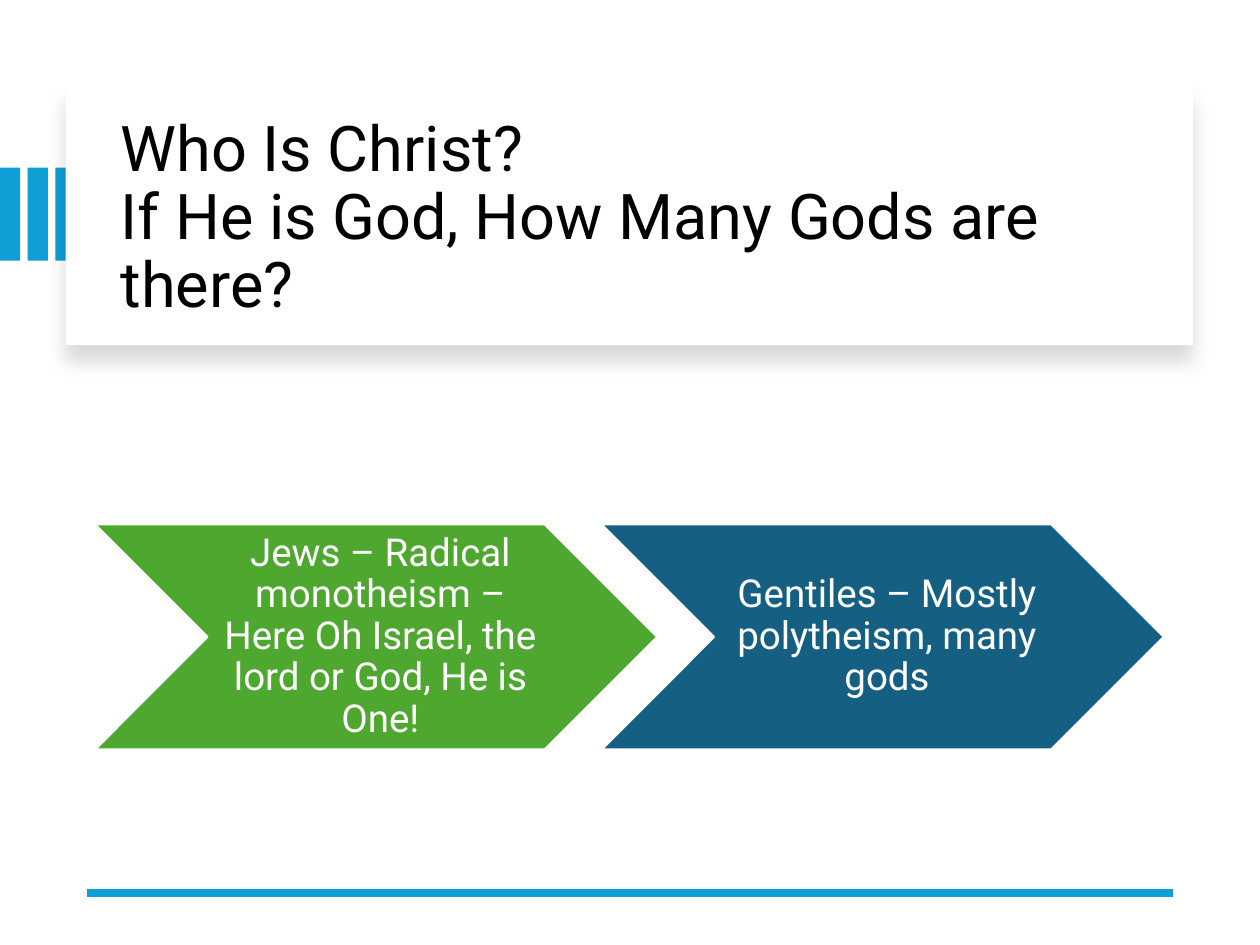
from dataclasses import dataclass

from lxml.etree import SubElement
from pptx import Presentation
from pptx.dml.color import RGBColor
from pptx.enum.shapes import MSO_CONNECTOR, MSO_SHAPE
from pptx.enum.text import MSO_ANCHOR, PP_ALIGN
from pptx.oxml import parse_xml
from pptx.oxml.ns import nsdecls, qn
from pptx.shapes.autoshape import Shape
from pptx.slide import Slide
from pptx.util import Inches, Pt

COLORS = {
    "accent": "0F9ED5",
    "green": "4EA72E",
    "navy": "156082",
    "white": "FFFFFF",
    "black": "000000",
}
FONT = "Roboto"


@dataclass
class Area:
    left: float
    top: float
    width: float
    height: float

    def lengths(self) -> list[int]:
        return [Inches(n) for n in (self.left, self.top, self.width, self.height)]


@dataclass
class Step:
    text: str
    color: str


STEPS = [
    Step("Jews – Radical monotheism – Here Oh Israel, the lord or God, He is One!", "green"),
    Step("Gentiles – Mostly polytheism, many gods", "navy"),
]


def color(name: str) -> RGBColor:
    return RGBColor.from_string(COLORS[name])


def add_filled(slide: Slide, kind: MSO_SHAPE, area: Area, fill: str) -> Shape:
    shape = slide.shapes.add_shape(kind, *area.lengths())
    shape.shadow.inherit = False
    shape.fill.solid()
    shape.fill.fore_color.rgb = color(fill)
    shape.line.fill.background()
    return shape


def add_text(slide: Slide, area: Area, text: str, size: int, ink: str,
             align: PP_ALIGN, insets: tuple[float, float, float, float]) -> None:
    box = slide.shapes.add_textbox(*area.lengths())
    frame = box.text_frame
    frame.word_wrap = True
    frame.vertical_anchor = MSO_ANCHOR.MIDDLE
    frame.margin_left, frame.margin_top, frame.margin_right, frame.margin_bottom = [
        Inches(inset) for inset in insets
    ]
    para = frame.paragraphs[0]
    para.text = text
    para.alignment = align
    para.line_spacing = 0.9
    for span in para.runs:
        span.font.name = FONT
        span.font.size = Pt(size)
        span.font.color.rgb = color(ink)


def add_soft_shadow(shape: Shape) -> None:
    effects = shape._element.spPr.find(qn("a:effectLst"))
    effects.append(parse_xml(
        f'<a:outerShdw {nsdecls("a")} blurRad="{Pt(11)}" dist="{Pt(10)}" '
        f'dir="5400000" algn="t" rotWithShape="0">'
        f'<a:srgbClr val="{COLORS["black"]}"><a:alpha val="15000"/></a:srgbClr>'
        f'</a:outerShdw>'
    ))


def add_header(slide: Slide) -> None:
    for index in range(3):
        add_filled(slide, MSO_SHAPE.RECTANGLE, Area(0.22 * index, 1.33, 0.16, 0.74), "accent")
    card = add_filled(slide, MSO_SHAPE.RECTANGLE, Area(0.52, 0.67, 8.95, 2.07), "white")
    add_soft_shadow(card)
    add_text(slide, Area(0.86, 0.89, 8.34, 1.7),
             "Who Is Christ?\nIf He is God, How Many Gods are there?",
             36, "black", PP_ALIGN.LEFT, (0.1, 0.05, 0.1, 0.05))


def add_footer_rule(slide: Slide) -> None:
    rule = slide.shapes.add_connector(
        MSO_CONNECTOR.STRAIGHT, Inches(9.31), Inches(7.09), Inches(0.69), Inches(7.09))
    rule.line.color.rgb = color("accent")
    rule.line.width = Pt(4.5)
    SubElement(rule._element.spPr, qn("a:effectLst"))


def add_step(slide: Slide, step: Step, left: float) -> None:
    top, width, height = 4.16, 4.47, 1.79
    chevron = add_filled(slide, MSO_SHAPE.CHEVRON, Area(left, top, width, height), step.color)
    chevron.line.color.rgb = color("white")
    chevron.line.width = Pt(1.5)
    add_text(slide, Area(left + height / 2, top, width - height, height),
             step.text, 22, "white", PP_ALIGN.CENTER, (0.1, 0.03, 0.03, 0.03))


def main() -> None:
    deck = Presentation()
    deck.slide_width, deck.slide_height = Inches(10), Inches(7.5)
    page = deck.slides.add_slide(deck.slide_layouts[6])
    add_header(page)
    add_footer_rule(page)
    for index, step in enumerate(STEPS):
        add_step(page, step, 0.75 + 4.02 * index)
    deck.save("out.pptx")


if __name__ == "__main__":
    main()
